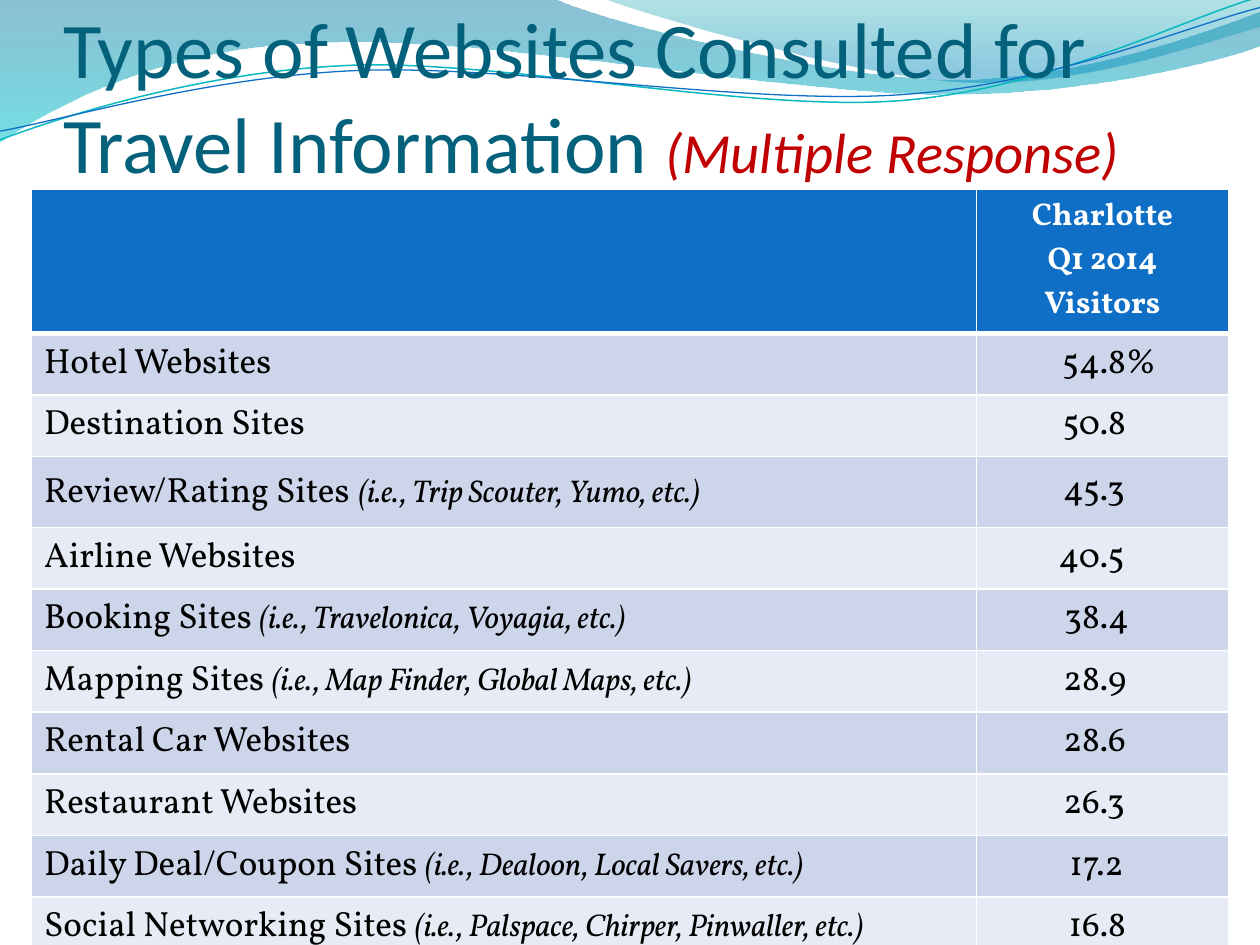
from lxml.etree import SubElement
from pptx import Presentation
from pptx.dml.color import RGBColor
from pptx.enum.text import MSO_ANCHOR, MSO_AUTO_SIZE, PP_ALIGN
from pptx.oxml.ns import qn
from pptx.util import Pt

TITLE = [("Types of Websites Consulted for Travel Information ", {"size": 45, "color": "04617B"}),
         ("(Multiple Response)", {"size": 32.4, "color": "C00000", "italic": True})]
HEADER = "Charlotte\nQ1 2014\nVisitors"
ROWS = [
    ("Hotel Websites", "", "54.8%"),
    ("Destination Sites", "", "50.8"),
    ("Review/Rating Sites", "(i.e., Trip Scouter, Yumo, etc.)", "45.3"),
    ("Airline Websites", "", "40.5"),
    ("Booking Sites", "(i.e., Travelonica, Voyagia, etc.)", "38.4"),
    ("Mapping Sites", "(i.e., Map Finder, Global Maps, etc.)", "28.9"),
    ("Rental Car Websites", "", "28.6"),
    ("Restaurant Websites", "", "26.3"),
    ("Daily Deal/Coupon Sites", "(i.e., Dealoon, Local Savers, etc.)", "17.2"),
    ("Social Networking Sites", "(i.e., Palspace, Chirper, Pinwaller, etc.)", "16.8"),
]
WIDE_GAP_LABEL = "Review/Rating Sites"
BANDS = ["CCD5EA", "E7EBF5"]
BLUE, WHITE, BLACK = "0F6FC6", "FFFFFF", "000000"
BODY_FONT = "Vollkorn"

FILLED_WAVES = [
    ([(0, 0), (316.8, -0.7), (342.7, 12.2, 478.1, 45.4, 545.8, 45.4),
      (614.2, 45.4, 689.8, 18.7, 720, 6.5), (720.7, 25.9),
      (707.8, 31.7, 626.4, 54.7, 537.1, 54), (447.8, 54, 275, 20.2, 185, 24.5),
      (92.9, 25.9, 33.1, 59.8, -0.7, 81.4)],
     [(0, "0074A1", 45), (1, "00C6CF", 55)]),
    ([(344.9, -0.7), (366.5, 7.9, 491, 44.6, 553.7, 46.8),
      (616.3, 49.7, 691.9, 23, 720, 15.1), (720, 0)],
     [(0, "00A1A9", 30), (0.8, "008BBF", 45)]),
]
LINE_WAVES = [
    ([(0, 79.9), (34.6, 67, 113.8, 41, 199.4, 37.4), (284.4, 33.8, 427, 64.1, 513.4, 57.6),
      (599.8, 51.1, 675.4, 10.8, 718.6, -1.4)], "0AB8BF", 0.85),
    ([(0, 74.9), (33.8, 69.1, 118.1, 43.9, 203.8, 40.3), (290.2, 36.7, 429.8, 60.5, 516.2, 54),
      (601.9, 48.2, 677.5, 15.1, 720, 4.3)], BLUE, 0.75),
]


def rgb(value):
    return RGBColor.from_string(value)


def add_text(para, text, size=20, color=BLACK, font=BODY_FONT, bold=False, italic=False):
    for index, line in enumerate(text.split("\n")):
        if index:
            para.add_line_break()
        span = para.add_run()
        span.text = line
        span.font.size, span.font.name = Pt(size), font
        span.font.bold, span.font.italic = bold, italic
        span.font.color.rgb = rgb(color)


def bend(wave, segments):
    corners = iter(list(wave._element.iter(qn("a:lnTo"))))
    for segment in segments:
        group = [next(corners) for _ in range(len(segment) // 2)]
        if len(group) == 3:
            first, *others = group
            first.tag = qn("a:cubicBezTo")
            for corner in others:
                first.append(corner[0])
                corner.getparent().remove(corner)


def add_wave(page, segments, close):
    points = [(Pt(x), Pt(y)) for segment in segments
              for x, y in zip(segment[::2], segment[1::2])]
    builder = page.shapes.build_freeform(*points[0])
    builder.add_line_segments(points[1:], close=close)
    wave = builder.convert_to_shape()
    bend(wave, segments[1:])
    wave.shadow.inherit = False
    return wave


def add_filled_wave(page, segments, stops):
    wave = add_wave(page, segments, True)
    wave.line.fill.background()
    wave.fill.gradient()
    wave.fill.gradient_angle = 270
    for stop, (position, color, opacity) in zip(wave.fill.gradient_stops, stops):
        stop.position, stop.color.rgb = position, rgb(color)
    colors = wave._element.spPr.iter(qn("a:srgbClr"))
    for element, (position, color, opacity) in zip(colors, stops):
        SubElement(element, qn("a:alpha"), val=str(opacity * 1000))


def add_line_wave(page, segments, color, width):
    wave = add_wave(page, segments, False)
    wave.fill.background()
    wave.line.color.rgb, wave.line.width = rgb(color), Pt(width)


def style_cell(cell, fill, top=1, bottom=1):
    properties = cell._tc.get_or_add_tcPr()
    for side, width in {"L": 1, "R": 1, "T": top, "B": bottom}.items():
        border = SubElement(properties, qn(f"a:ln{side}"), w=str(Pt(width)))
        SubElement(SubElement(border, qn("a:solidFill")), qn("a:srgbClr"), val=WHITE)
    cell.fill.solid()
    cell.fill.fore_color.rgb = rgb(fill)


def add_decimal_tab(para, position):
    tabs = SubElement(para._p.get_or_add_pPr(), qn("a:tabLst"))
    SubElement(tabs, qn("a:tab"), pos=str(Pt(position)), algn="dec")


def format_title(title):
    title.left, title.top, title.width, title.height = Pt(36), Pt(18), Pt(648), Pt(90)
    frame = title.text_frame
    frame.word_wrap, frame.auto_size = True, MSO_AUTO_SIZE.NONE
    frame.vertical_anchor = MSO_ANCHOR.BOTTOM
    frame.margin_left = frame.margin_right = frame.margin_bottom = 0
    frame.margin_top = Pt(3.6)
    para = frame.paragraphs[0]
    para.alignment = PP_ALIGN.LEFT
    for text, style in TITLE:
        add_text(para, text, font="Calibri", **style)


def add_website_table(page):
    table = page.shapes.add_table(len(ROWS) + 1, 2, Pt(18), Pt(108), Pt(684), Pt(297)).table
    table.columns[0].width, table.columns[1].width = Pt(540), Pt(144)
    for index, row in enumerate(table.rows):
        row.height = Pt(24.5 if index else 52)
    for column in range(2):
        style_cell(table.cell(0, column), BLUE, bottom=3)
    para = table.cell(0, 1).text_frame.paragraphs[0]
    para.alignment = PP_ALIGN.CENTER
    add_text(para, HEADER, size=18, color=WHITE, bold=True)

    for index, (label, examples, value) in enumerate(ROWS, 1):
        cells = [table.cell(index, column) for column in range(2)]
        for cell in cells:
            style_cell(cell, BANDS[(index - 1) % 2], top=3 if index == 1 else 1)
            cell.vertical_anchor = MSO_ANCHOR.MIDDLE
        name, share = (cell.text_frame.paragraphs[0] for cell in cells)
        add_text(name, label)
        if examples:
            add_text(name, " ", size=24 if label == WIDE_GAP_LABEL else 20)
            add_text(name, examples, size=18, italic=True)
        add_decimal_tab(share, 63.36)
        add_text(share, "\t" + value)


def main():
    """Build the slide on websites consulted for travel information."""
    deck = Presentation()
    deck.slide_width, deck.slide_height = Pt(720), Pt(540)
    page = deck.slides.add_slide(deck.slide_layouts[5])
    for segments, stops in FILLED_WAVES:
        add_filled_wave(page, segments, stops)
    for segments, color, width in LINE_WAVES:
        add_line_wave(page, segments, color, width)
    title = page.shapes.title
    title._element.getparent().append(title._element)
    format_title(title)
    add_website_table(page)
    deck.save("out.pptx")


if __name__ == "__main__":
    main()
